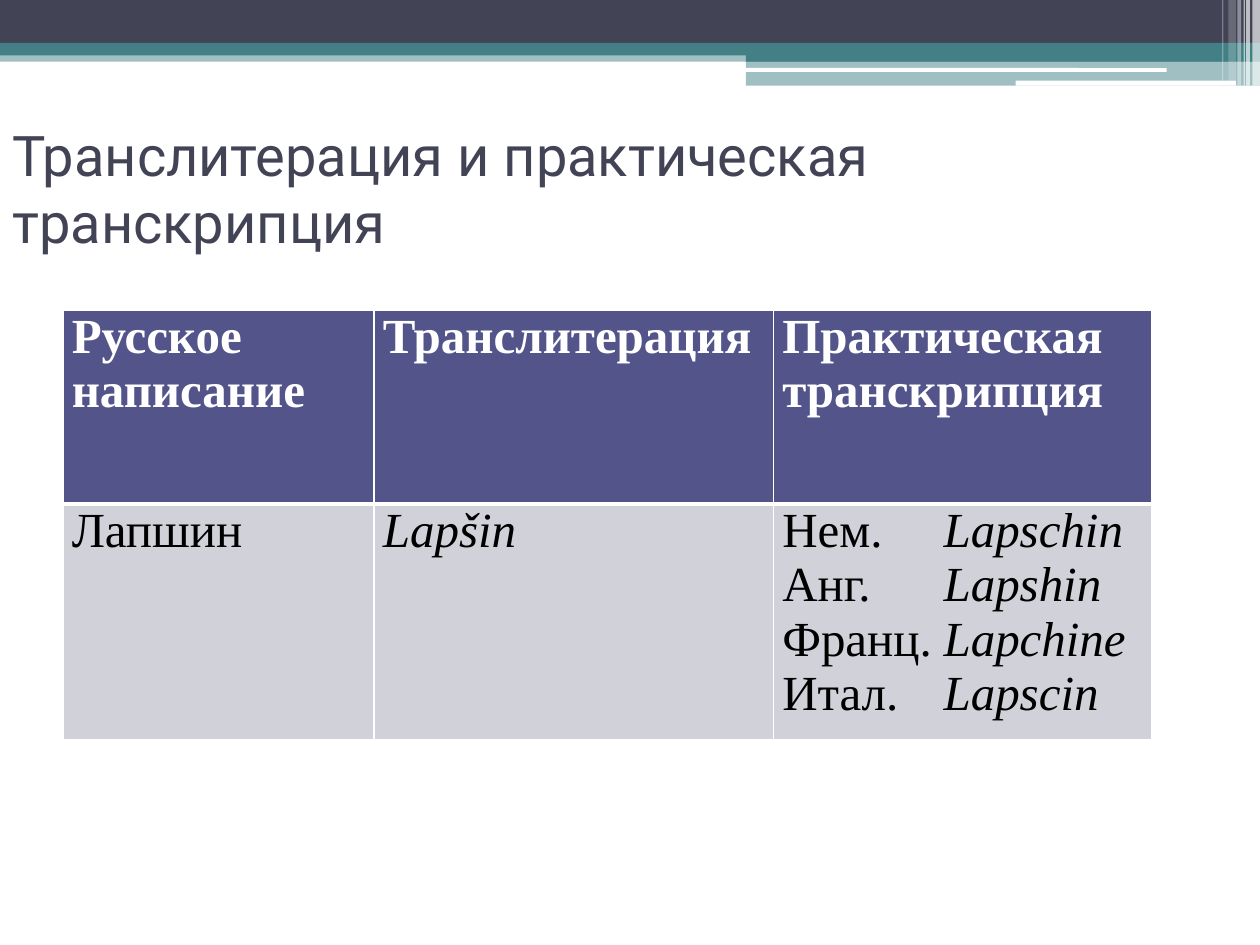
"""Build the slide comparing transliteration with practical transcription."""
from dataclasses import dataclass

from lxml.etree import SubElement
from pptx import Presentation
from pptx.dml.color import RGBColor as Rgb
from pptx.enum.shapes import MSO_SHAPE as Preset
from pptx.enum.text import MSO_ANCHOR as Anchor, PP_ALIGN as Align
from pptx.oxml.ns import qn
from pptx.util import Inches, Pt

GRID_COLUMNS, GRID_ROWS = 1000, 750
SLIDE_WIDTH, SLIDE_HEIGHT = Inches(10), Inches(7.5)
COLORS = {
    "navy": "424456", "teal": "438086", "white": "FFFFFF",
    "header": "53548A", "body": "D1D1DA", "black": "000000",
}
TITLE_FONT, TABLE_FONT = "Roboto", "Times New Roman"


@dataclass(frozen=True)
class Band:
    left: float
    top: float
    width: float
    height: float
    color: str
    opacity: int = 100
    rounded: bool = False


@dataclass(frozen=True)
class RowStyle:
    fill: str
    text: str
    bold: bool
    edges: dict[str, int]


BANDS = [
    Band(0, 40, 1000, 9, "teal", 50),
    Band(0, 0, 1000, 34, "navy"),
    Band(0, 34, 1000, 10, "teal"),
    Band(592, 39, 408, 10, "teal"),
    Band(592, 48, 408, 20, "teal", 50),
    Band(591, 54, 335, 3, "white", rounded=True),
    Band(806, 64, 175, 4, "white", rounded=True),
]
STRIPES = [
    Band(left, 0, width, height, "white", opacity)
    for left, width, height, opacity in [
        (994, 6, 68, 65), (989, 3, 68, 65), (987, 1, 68, 60),
        (982, 3, 68, 40), (975, 6, 64, 20), (970, 1, 64, 30),
    ]
]
COLUMN_WIDTHS = [247, 317, 300]
ROW_HEIGHT = 154
TAB_STOP = 128
HEADER_STYLE = RowStyle("header", "white", True, {"lnL": 1, "lnR": 1, "lnT": 1, "lnB": 3})
BODY_STYLE = RowStyle("body", "black", False, {"lnL": 1, "lnR": 1, "lnT": 3, "lnB": 1})
HEADINGS = ["Русское написание", "Транслитерация", "Практическая транскрипция"]
SPELLINGS = [
    ("Нем.", "Lapschin"), ("Анг.", "Lapshin"),
    ("Франц.", "Lapchine"), ("Итал.", "Lapscin"),
]
TABLE_ROWS = [
    (HEADER_STYLE, [[[(heading, False)]] for heading in HEADINGS]),
    (BODY_STYLE, [
        [[("Лапшин", False)]],
        [[("Lapšin", True)]],
        [[(f"{language}\t", False), (name, True)] for language, name in SPELLINGS],
    ]),
]


def across(columns: float) -> int:
    return round(SLIDE_WIDTH * columns / GRID_COLUMNS)


def down(rows: float) -> int:
    return round(SLIDE_HEIGHT * rows / GRID_ROWS)


def draw_band(slide, band: Band) -> None:
    preset = Preset.ROUNDED_RECTANGLE if band.rounded else Preset.RECTANGLE
    strip = slide.shapes.add_shape(
        preset, across(band.left), down(band.top), across(band.width), down(band.height))
    strip.shadow.inherit = False
    strip.line.fill.background()
    strip.fill.solid()
    strip.fill.fore_color.rgb = Rgb.from_string(COLORS[band.color])
    if band.opacity < 100:
        color = strip._element.spPr.find(".//" + qn("a:srgbClr"))
        SubElement(color, qn("a:alpha"), val=str(band.opacity * 1000))


def style_font(font, name: str, size: int, color: str) -> None:
    font.name, font.size = name, Pt(size)
    font.color.rgb = Rgb.from_string(COLORS[color])


def draw_title(slide) -> None:
    title = slide.shapes.add_textbox(0, down(102), across(1000), down(94)).text_frame
    title.word_wrap = True
    title.vertical_anchor = Anchor.MIDDLE
    title.text = "Транслитерация и практическая транскрипция"
    style_font(title.paragraphs[0].runs[0].font, TITLE_FONT, 32, "navy")


def draw_borders(cell, edges: dict[str, int]) -> None:
    properties = cell._tc.get_or_add_tcPr()
    for edge, points in edges.items():
        line = SubElement(properties, qn(f"a:{edge}"), w=str(Pt(points)))
        fill = SubElement(line, qn("a:solidFill"))
        SubElement(fill, qn("a:srgbClr"), val=COLORS["white"])


def fill_cell(cell, paragraphs: list, style: RowStyle) -> None:
    cell.margin_left = cell.margin_right = across(7)
    cell.margin_top = cell.margin_bottom = 0
    draw_borders(cell, style.edges)
    cell.fill.solid()
    cell.fill.fore_color.rgb = Rgb.from_string(COLORS[style.fill])
    for index, parts in enumerate(paragraphs):
        frame = cell.text_frame
        paragraph = frame.add_paragraph() if index else frame.paragraphs[0]
        paragraph.alignment = Align.JUSTIFY
        if len(parts) > 1:
            tabs = SubElement(paragraph._p.get_or_add_pPr(), qn("a:tabLst"))
            SubElement(tabs, qn("a:tab"), pos=str(across(TAB_STOP)), algn="l")
        for text, italic in parts:
            run = paragraph.add_run()
            run.text = text
            style_font(run.font, TABLE_FONT, 28, style.text)
            run.font.bold, run.font.italic = style.bold, italic


def draw_table(slide) -> None:
    table = slide.shapes.add_table(
        len(TABLE_ROWS), len(COLUMN_WIDTHS), across(50), down(246),
        across(sum(COLUMN_WIDTHS)), down(ROW_HEIGHT * len(TABLE_ROWS))).table
    for column, width in zip(table.columns, COLUMN_WIDTHS):
        column.width = across(width)
    for row, (style, contents) in zip(table.rows, TABLE_ROWS):
        row.height = down(ROW_HEIGHT)
        for cell, paragraphs in zip(row.cells, contents):
            fill_cell(cell, paragraphs, style)


def main() -> None:
    deck = Presentation()
    deck.slide_width, deck.slide_height = SLIDE_WIDTH, SLIDE_HEIGHT
    slide = deck.slides.add_slide(deck.slide_layouts[6])
    for band in BANDS + STRIPES:
        draw_band(slide, band)
    draw_title(slide)
    draw_table(slide)
    deck.save("out.pptx")


if __name__ == "__main__":
    main()
